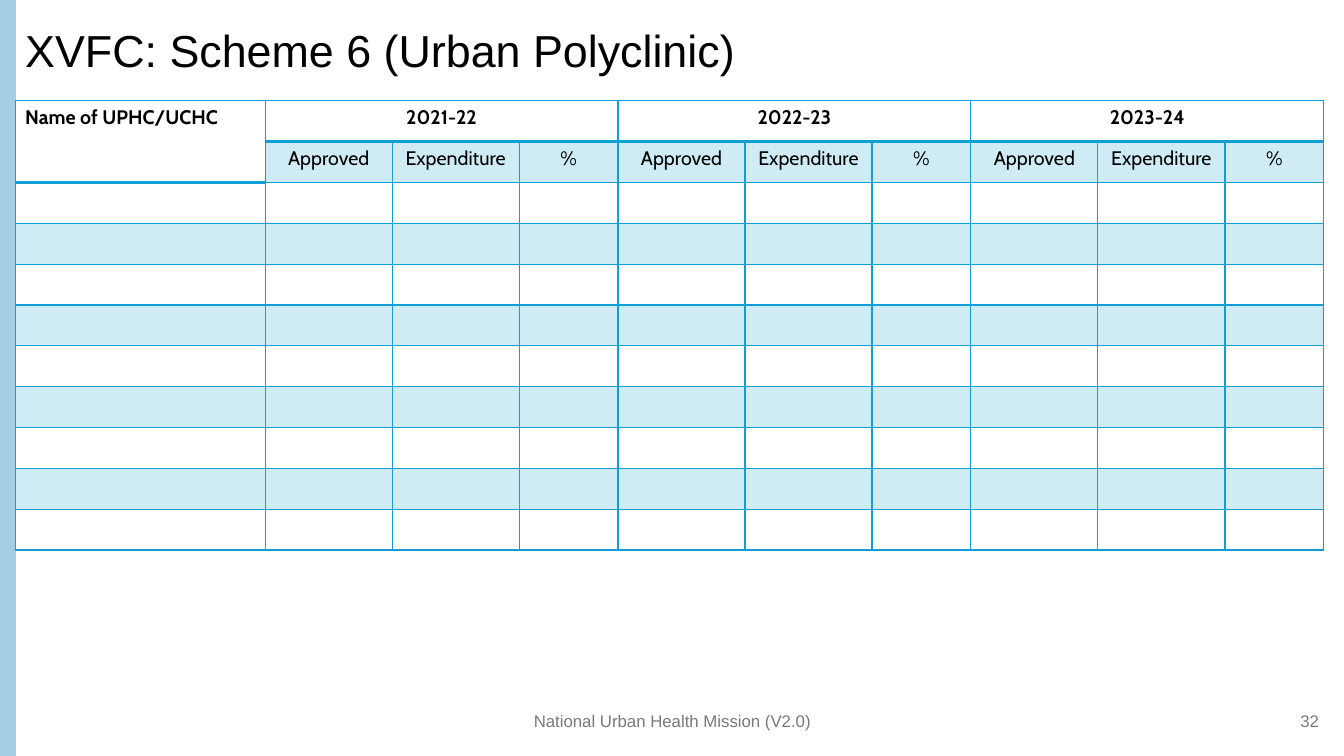
import dataclasses

import lxml.etree
import pptx
import pptx.dml.color
import pptx.enum.shapes
import pptx.enum.text
import pptx.oxml.ns
import pptx.slide
import pptx.table
import pptx.text.text
import pptx.util

Inches = pptx.util.Inches
RGBColor = pptx.dml.color.RGBColor
Align = pptx.enum.text.PP_ALIGN
Anchor = pptx.enum.text.MSO_ANCHOR
qn = pptx.oxml.ns.qn

BLACK = RGBColor(0x00, 0x00, 0x00)
GREY = RGBColor(0x79, 0x79, 0x79)
BLUE = RGBColor(0x0F, 0x9E, 0xD5)
PALE = RGBColor(0xA6, 0xCE, 0xE3)

YEARS = ["2021-22", "2022-23", "2023-24"]
HEADS = ["Approved", "Expenditure", "%"]
NAME_WIDTH = 2.48
HEAD_WIDTHS = [1.26, 1.26, 0.98]
ROWS = 11
HEIGHT = 4.46


@dataclasses.dataclass(frozen=True)
class Style:
    font: str
    size: int
    color: RGBColor
    bold: bool = False


@dataclasses.dataclass(frozen=True)
class Note:
    text: str
    left: float
    width: float
    align: Align


TITLE = Style("Arial", 32, BLACK)
SMALL = Style("Arial", 12, GREY)
HEAD = Style("Cabin", 14, BLACK, True)
LABEL = Style("Cabin", 14, BLACK)

NOTES = [
    Note("National Urban Health Mission (V2.0)", 4.42, 4.5, Align.CENTER),
    Note("32", 10.18, 3, Align.RIGHT),
]


def write(frame: pptx.text.text.TextFrame, text: str, style: Style, align: Align) -> None:
    line = frame.paragraphs[0]
    line.alignment = align
    run = line.add_run()
    run.text = text
    run.font.name = style.font
    run.font.size = pptx.util.Pt(style.size)
    run.font.bold = style.bold
    run.font.color.rgb = style.color


def edge(cell: pptx.table._Cell, side: str, width: float) -> None:
    props = cell._tc.get_or_add_tcPr()
    line = lxml.etree.SubElement(props, qn(f"a:ln{side}"), w=str(pptx.util.Pt(width)))
    fill = lxml.etree.SubElement(line, qn("a:solidFill"))
    lxml.etree.SubElement(fill, qn("a:srgbClr"), val=str(BLUE))


def tint(cell: pptx.table._Cell) -> None:
    cell.fill.solid()
    cell.fill.fore_color.rgb = BLUE
    color = cell._tc.tcPr.find(qn("a:solidFill")).find(qn("a:srgbClr"))
    lxml.etree.SubElement(color, qn("a:alpha"), val="20000")


def add_bar(slide: pptx.slide.Slide) -> None:
    bar = slide.shapes.add_shape(
        pptx.enum.shapes.MSO_SHAPE.RECTANGLE, 0, 0, Inches(0.15), Inches(7.5))
    bar.shadow.inherit = False
    bar.fill.solid()
    bar.fill.fore_color.rgb = PALE
    bar.line.color.rgb = PALE
    bar.line.width = pptx.util.Pt(1.5)


def add_title(slide: pptx.slide.Slide, text: str) -> None:
    title = slide.shapes.title
    title.left, title.top = Inches(0.15), Inches(0.15)
    title.width, title.height = Inches(13.05), Inches(0.75)
    frame = title.text_frame
    frame.auto_size = pptx.enum.text.MSO_AUTO_SIZE.NONE
    frame.vertical_anchor = Anchor.MIDDLE
    write(frame, text, TITLE, Align.LEFT)
    frame.paragraphs[0].line_spacing = 0.9


def add_grid(slide: pptx.slide.Slide) -> None:
    widths = [NAME_WIDTH] + HEAD_WIDTHS * len(YEARS)
    table = slide.shapes.add_table(
        ROWS, len(widths), Inches(0.15), Inches(1),
        Inches(sum(widths)), Inches(HEIGHT)).table
    table.first_row = table.horz_banding = False
    for col, width in zip(table.columns, widths):
        col.width = Inches(width)
    for row in table.rows:
        row.height = Inches(HEIGHT / ROWS)

    # Borders and bands; a thick rule closes the header
    for r in range(ROWS):
        for c in range(len(widths)):
            cell = table.cell(r, c)
            rule = 1 if c == 0 else 0
            edge(cell, "L", 1)
            edge(cell, "R", 1)
            edge(cell, "T", 2 if r == rule + 1 else 1)
            edge(cell, "B", 2 if r == rule or r + c == 0 else 1)
            if r % 2 and (r > 1 or c > 0):
                tint(cell)
            else:
                cell.fill.background()
            if r > 1:
                cell.margin_top = cell.margin_bottom = Inches(0.02)

    # Header text
    name = table.cell(0, 0)
    name.merge(table.cell(1, 0))
    write(name.text_frame, "Name of UPHC/UCHC", HEAD, Align.LEFT)
    span = len(HEADS)
    for i, year in enumerate(YEARS):
        first = 1 + i * span
        cell = table.cell(0, first)
        cell.merge(table.cell(0, first + span - 1))
        write(cell.text_frame, year, HEAD, Align.CENTER)
        for j, head in enumerate(HEADS):
            write(table.cell(1, first + j).text_frame, head, LABEL, Align.CENTER)


def add_note(slide: pptx.slide.Slide, note: Note) -> None:
    box = slide.shapes.add_textbox(
        Inches(note.left), Inches(6.95), Inches(note.width), Inches(0.4))
    frame = box.text_frame
    frame.word_wrap = True
    frame.vertical_anchor = Anchor.MIDDLE
    write(frame, note.text, SMALL, note.align)


def main() -> None:
    deck = pptx.Presentation()
    deck.slide_width, deck.slide_height = Inches(13.33), Inches(7.5)
    slide = deck.slides.add_slide(deck.slide_layouts[5])
    add_bar(slide)
    add_title(slide, "XVFC: Scheme 6 (Urban Polyclinic)")
    add_grid(slide)
    for note in NOTES:
        add_note(slide, note)
    deck.save("out.pptx")


if __name__ == "__main__":
    main()
